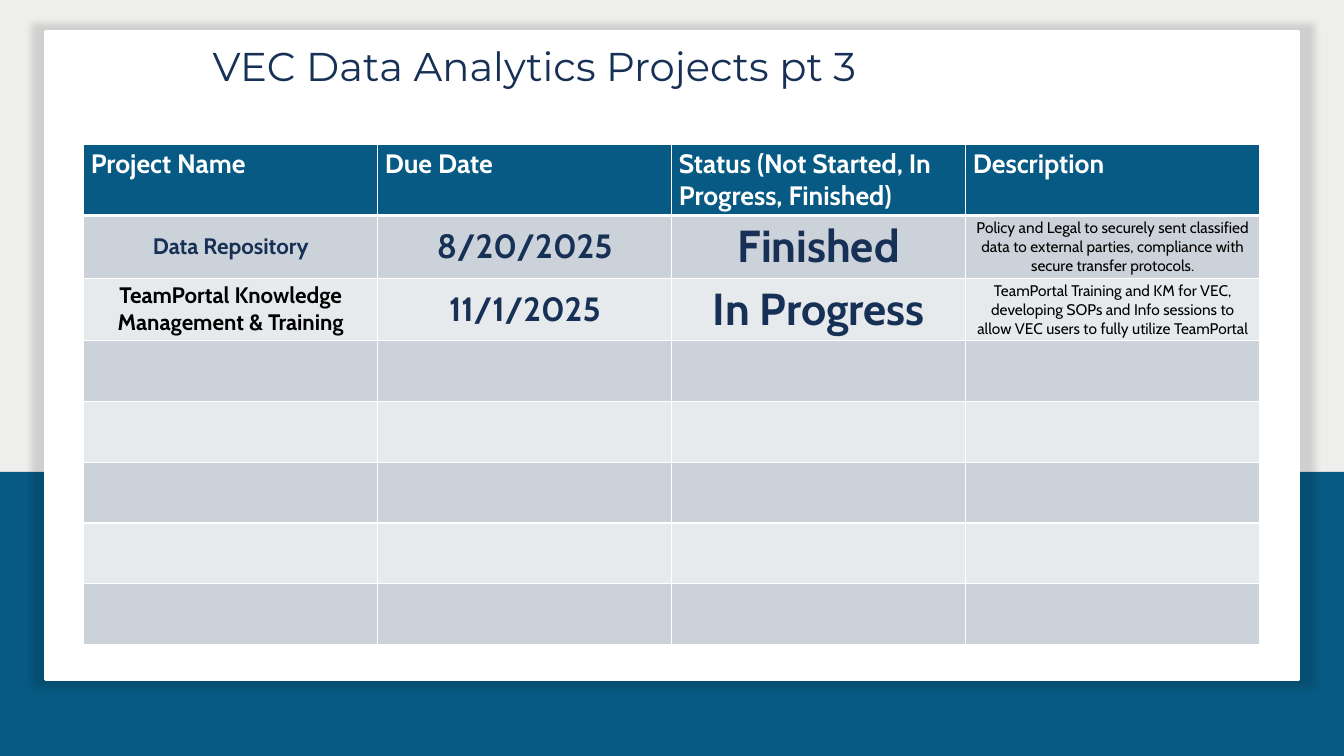
from lxml.etree import SubElement
from pptx import Presentation
from pptx.dml.color import RGBColor
from pptx.enum.shapes import MSO_SHAPE as Shape
from pptx.enum.text import MSO_ANCHOR as Anchor, MSO_AUTO_SIZE as AutoSize, PP_ALIGN as Align
from pptx.oxml.ns import qn
from pptx.util import Cm, Pt

PAPER = RGBColor(0xEE, 0xEE, 0xED)
TEAL = RGBColor(0x07, 0x5A, 0x83)
NAVY = RGBColor(0x17, 0x30, 0x55)
WHITE = RGBColor(0xFF, 0xFF, 0xFF)
BLACK = RGBColor(0x00, 0x00, 0x00)
BANDS = (RGBColor(0xCC, 0xD2, 0xD9), RGBColor(0xE7, 0xEA, 0xED))

HEADERS = ("Project Name", "Due Date", "Status (Not Started, In Progress, Finished)", "Description")
PROJECTS = (
    ("Data Repository", "8/20/2025", "Finished",
     "Policy and Legal to securely sent classified data to external parties, "
     "compliance with secure transfer protocols."),
    ("TeamPortal Knowledge Management & Training", "11/1/2025", "In Progress",
     "TeamPortal Training and KM for VEC, developing SOPs and Info sessions to "
     "allow VEC users to fully utilize TeamPortal"),
)
NAME_COLORS = (NAVY, BLACK)
COLUMN_SIZES = (16, 24, 32, 11)
BODY_ROWS = 7


def write(frame, text, size, color, font="Cabin", bold=False, align=Align.LEFT, spacing=None):
    paragraph = frame.paragraphs[0]
    paragraph.alignment = align
    paragraph.line_spacing = spacing
    run = paragraph.add_run()
    run.text = text
    run.font.name = font
    run.font.size = Pt(size)
    run.font.bold = bold
    run.font.color.rgb = color


def add_panel(slide, left, top, width, height, color):
    panel = slide.shapes.add_shape(Shape.RECTANGLE, left, top, width, height)
    panel.shadow.inherit = False
    panel.fill.solid()
    panel.fill.fore_color.rgb = color
    panel.line.fill.background()
    return panel


def add_glow_shadow(shape):
    """Spread a faint shadow evenly around the shape."""
    effects = shape._element.spPr.find(qn("a:effectLst"))
    shadow = SubElement(effects, qn("a:outerShdw"), blurRad=str(Pt(5)), sx="102000",
                        sy="102000", algn="ctr", rotWithShape="0")
    color = SubElement(shadow, qn("a:srgbClr"), val=str(BLACK))
    SubElement(color, qn("a:alpha"), val="13000")


def add_backdrop(slide, presentation):
    slide.background.fill.solid()
    slide.background.fill.fore_color.rgb = PAPER
    add_panel(slide, 0, Cm(11.89), presentation.slide_width, Cm(7.16), TEAL)
    card = add_panel(slide, Cm(1.14), Cm(0.8), Cm(31.6), Cm(16.33), WHITE)
    card.line.color.rgb = WHITE
    card.line.width = Pt(2)
    add_glow_shadow(card)


def format_title(slide, text):
    title = slide.shapes.title
    title.left, title.top, title.width, title.height = Cm(5.36), Cm(0.84), Cm(29.11), Cm(1.3)
    frame = title.text_frame
    frame.margin_left = frame.margin_right = frame.margin_top = frame.margin_bottom = 0
    frame.vertical_anchor = Anchor.TOP
    frame.auto_size = AutoSize.SHAPE_TO_FIT_TEXT
    write(frame, text, 28.7, NAVY, font="Montserrat", spacing=Pt(40.2))
    # Bring the title in front of the backdrop.
    slide.shapes._spTree.append(title._element)


def style_cell(cell, color, bottom_width=1):
    """Fill the cell, set its insets and rule its four sides in white."""
    cell.margin_left = cell.margin_right = Cm(0.18)
    cell.margin_top = cell.margin_bottom = Cm(0.09)
    cell.fill.solid()
    cell.fill.fore_color.rgb = color
    properties = cell._tc.get_or_add_tcPr()
    sides = (("L", 1), ("R", 1), ("T", 1), ("B", bottom_width))
    for position, (side, width) in enumerate(sides):
        border = SubElement(properties, qn(f"a:ln{side}"), w=str(Pt(width)))
        fill = SubElement(border, qn("a:solidFill"))
        SubElement(fill, qn("a:srgbClr"), val=str(WHITE))
        properties.insert(position, border)


def add_project_table(slide):
    table = slide.shapes.add_table(BODY_ROWS + 1, len(HEADERS), Cm(2.11), Cm(3.64),
                                   Cm(29.64), Cm(12.43)).table
    for column in table.columns:
        column.width = Cm(7.41)
    for index, row in enumerate(table.rows):
        row.height = Cm(1.53) if index else Cm(1.75)
        for cell in row.cells:
            if index:
                style_cell(cell, BANDS[(index - 1) % 2], bottom_width=1)
            else:
                style_cell(cell, TEAL, bottom_width=3)

    for column, header in enumerate(HEADERS):
        write(table.cell(0, column).text_frame, header, 19, WHITE, bold=True)
    for row, (project, name_color) in enumerate(zip(PROJECTS, NAME_COLORS), start=1):
        colors = (name_color, NAVY, NAVY, BLACK)
        for column, (text, size, color) in enumerate(zip(project, COLUMN_SIZES, colors)):
            cell = table.cell(row, column)
            cell.vertical_anchor = Anchor.MIDDLE
            is_description = column == len(HEADERS) - 1
            write(cell.text_frame, text, size, color, bold=not is_description, align=Align.CENTER)


def main():
    presentation = Presentation()
    presentation.slide_width, presentation.slide_height = Cm(33.87), Cm(19.05)
    slide = presentation.slides.add_slide(presentation.slide_layouts.get_by_name("Title Only"))
    add_backdrop(slide, presentation)
    format_title(slide, "VEC Data Analytics Projects pt 3")
    add_project_table(slide)
    presentation.save("out.pptx")


if __name__ == "__main__":
    main()
